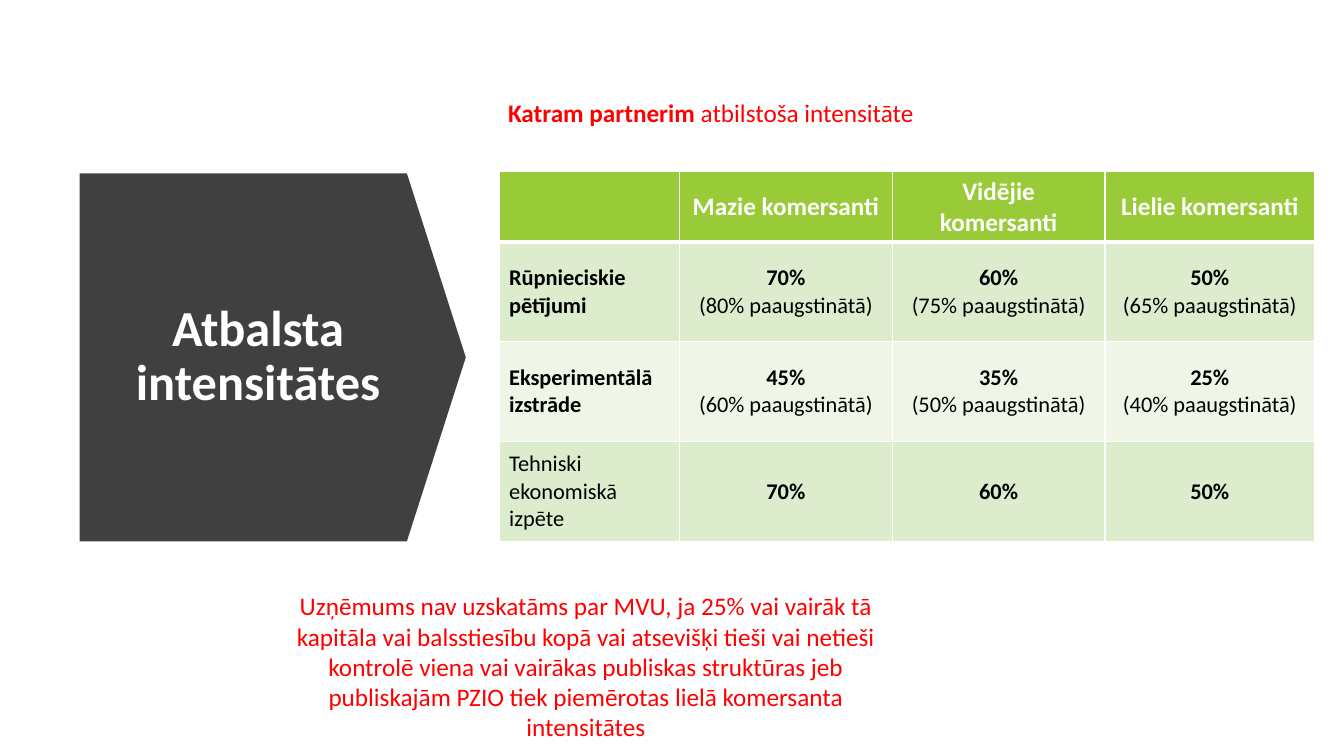
import pptx
import pptx.util
import pptx.dml.color
import pptx.enum.shapes
import pptx.enum.text
import pptx.oxml
import pptx.oxml.ns

PX = 9144  # EMU per px, 100 px to the inch
FONT = "Calibri"
COLORS = {"dark": "404040", "white": "FFFFFF", "black": "000000", "red": "FF0000",
          "header": "99CB38", "band": "DEECCE", "light": "EFF6E8"}

# A paragraph is a list of (text, bold) runs
TITLE = [[("Atbalsta intensitātes", True)]]
CAPTION = [[("Katram partnerim ", True), ("atbilstoša intensitāte", False)]]
NOTE = [[(line, False)] for line in (
    "Uzņēmums nav uzskatāms par MVU, ja 25% vai vairāk tā",
    "kapitāla vai balsstiesību kopā vai atsevišķi tieši vai netieši",
    "kontrolē viena vai vairākas publiskas struktūras jeb",
    "publiskajām PZIO tiek piemērotas lielā komersanta",
    "intensitātes")]

HEADER = ["", "Mazie komersanti", "Vidējie komersanti", "Lielie komersanti"]
# Label, label bold, (base rate, raised rate) for each company size
RATES = [
    ("Rūpnieciskie pētījumi", True, [("70%", "80%"), ("60%", "75%"), ("50%", "65%")]),
    ("Eksperimentālā izstrāde", True, [("45%", "60%"), ("35%", "50%"), ("25%", "40%")]),
    ("Tehniski ekonomiskā izpēte", False, [("70%", None), ("60%", None), ("50%", None)]),
]

ARROW_BOX = (88, 163, 365, 383)
TITLE_BOX = (112, 215, 288, 279)
CAPTION_BOX = (376, 92, 658, 40)
NOTE_BOX = (252, 581, 658, 162)
TABLE_LEFT, TABLE_TOP = 495, 170
COL_WIDTHS = [179, 211, 211, 208]
ROW_HEIGHTS = [70, 99, 99, 99]

CENTER = pptx.enum.text.PP_ALIGN.CENTER
LEFT = pptx.enum.text.PP_ALIGN.LEFT
MIDDLE = pptx.enum.text.MSO_ANCHOR.MIDDLE


def rgb(name):
    return pptx.dml.color.RGBColor.from_string(COLORS[name])


def emu(lengths):
    return [length * PX for length in lengths]


def write(tf, paragraphs, size, color, align=CENTER):
    for i, runs in enumerate(paragraphs):
        p = tf.add_paragraph() if i else tf.paragraphs[0]
        p.alignment = align
        p.font.name = FONT
        p.font.size = pptx.util.Pt(size)
        p.font.color.rgb = rgb(color)
        for text, bold in runs:
            r = p.add_run()
            r.text = text
            r.font.bold = bold


def add_text(s, box, paragraphs, size, color):
    tf = s.shapes.add_textbox(*emu(box)).text_frame
    tf.word_wrap = True
    write(tf, paragraphs, size, color)
    return tf


def set_borders(cell, top, bottom):
    """White cell borders; top and bottom widths in points."""
    sides = [("lnL", 1), ("lnR", 1), ("lnT", top), ("lnB", bottom)]
    tcPr = cell._tc.get_or_add_tcPr()
    for i, (tag, width) in enumerate(sides):
        tcPr.insert(i, pptx.oxml.parse_xml(
            f'<a:{tag} {pptx.oxml.ns.nsdecls("a")} w="{pptx.util.Pt(width)}"><a:solidFill>'
            f'<a:srgbClr val="{COLORS["white"]}"/></a:solidFill></a:{tag}>'))


def fill_cell(cell, row, paragraphs, size, color, fill, align=CENTER):
    cell.vertical_anchor = MIDDLE
    cell.fill.solid()
    cell.fill.fore_color.rgb = rgb(fill)
    write(cell.text_frame, paragraphs, size, color, align)
    set_borders(cell, top=3 if row == 1 else 1, bottom=3 if row == 0 else 1)


def add_rates_table(s):
    table = s.shapes.add_table(
        len(ROW_HEIGHTS), len(COL_WIDTHS),
        *emu((TABLE_LEFT, TABLE_TOP, sum(COL_WIDTHS), sum(ROW_HEIGHTS)))).table
    for col, width in zip(table.columns, emu(COL_WIDTHS)):
        col.width = width
    for row, height in zip(table.rows, emu(ROW_HEIGHTS)):
        row.height = height
    for c, text in enumerate(HEADER):
        runs = [(text, True)] if text else []
        fill_cell(table.cell(0, c), 0, [runs], 18, "white", "header")
    for r, (label, bold, rates) in enumerate(RATES, 1):
        fill = "band" if r % 2 else "light"
        fill_cell(table.cell(r, 0), r, [[(label, bold)]], 16, "black", fill, LEFT)
        for c, (base, raised) in enumerate(rates, 1):
            lines = [[(base, True)]]
            if raised:
                lines.append([(f"({raised} paaugstinātā)", False)])
            fill_cell(table.cell(r, c), r, lines, 16, "black", fill)


def main():
    prs = pptx.Presentation()
    prs.slide_width, prs.slide_height = emu((1333, 750))
    s = prs.slides.add_slide(prs.slide_layouts[6])

    arrow = s.shapes.add_shape(pptx.enum.shapes.MSO_SHAPE.DOWN_ARROW, *emu(ARROW_BOX))
    arrow.rotation = 270
    arrow.adjustments[0] = 1
    arrow.adjustments[1] = 0.16
    arrow.shadow.inherit = False
    arrow.fill.solid()
    arrow.fill.fore_color.rgb = rgb("dark")
    arrow.line.fill.background()

    tf = add_text(s, TITLE_BOX, TITLE, 36, "white")
    tf.vertical_anchor = MIDDLE
    tf.paragraphs[0].line_spacing = 0.9

    add_rates_table(s)
    for box, paragraphs in ((NOTE_BOX, NOTE), (CAPTION_BOX, CAPTION)):
        tf = add_text(s, box, paragraphs, 18, "red")
        tf.auto_size = pptx.enum.text.MSO_AUTO_SIZE.SHAPE_TO_FIT_TEXT

    prs.save("out.pptx")


if __name__ == "__main__":
    main()
